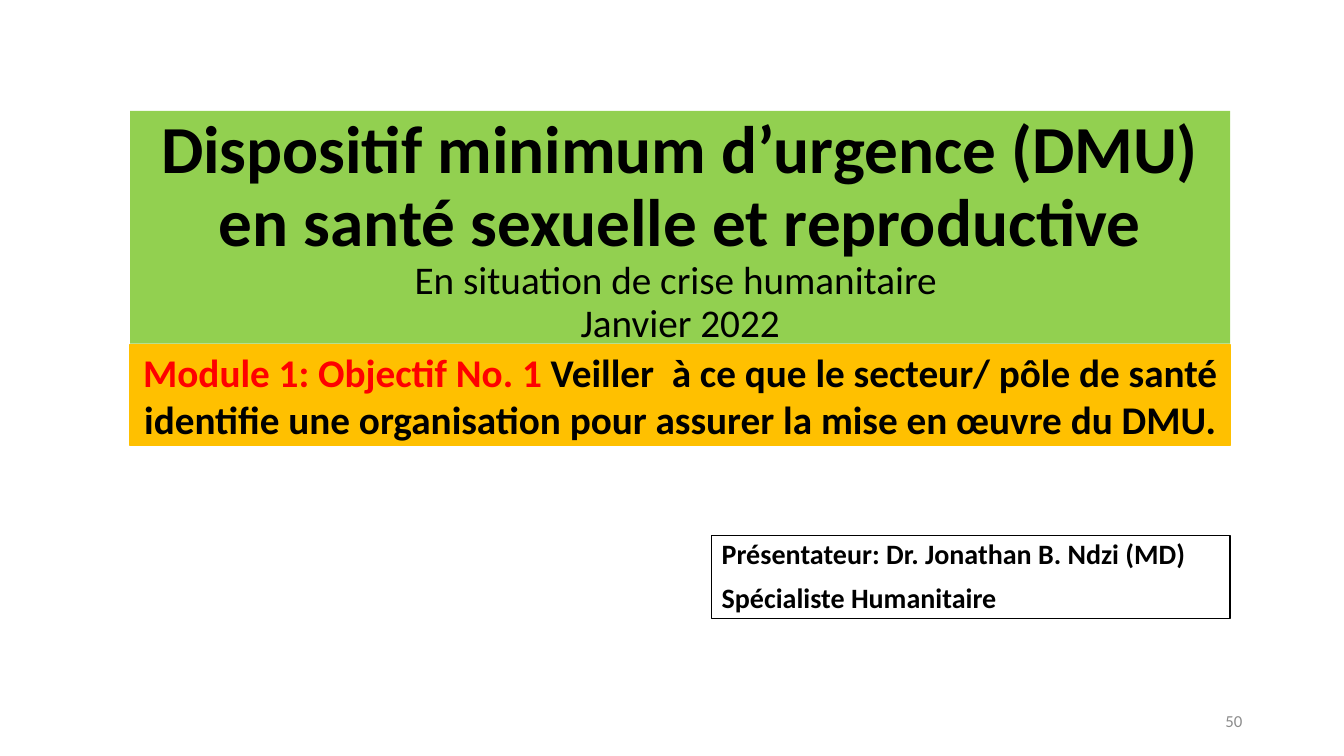
from pptx import Presentation, util as u
from pptx.dml.color import RGBColor
from pptx.enum import shapes, text

HUES = {"green": "92D050", "gold": "FFC000", "red": "FF0000",
        "black": "000000", "gray": "8C8C8C"}


class Deck:
    face = "Calibri"

    def __init__(self, wide, high):
        self.prs = Presentation()
        self.prs.slide_width, self.prs.slide_height = u.Inches(wide), u.Inches(high)
        self.slide = self.prs.slides.add_slide(self.prs.slide_layouts[6])

    def hue(self, name):
        return RGBColor.from_string(HUES[name])

    def box(self, spot, fill=None, line=None, width=1):
        shape = self.slide.shapes.add_shape(
            shapes.MSO_SHAPE.RECTANGLE, *map(u.Inches, spot))
        shape.shadow.inherit = False
        if fill:
            shape.fill.solid()
            shape.fill.fore_color.rgb = self.hue(fill)
        else:
            shape.fill.background()
        if line:
            shape.line.color.rgb = self.hue(line)
            shape.line.width = u.Pt(width)
        else:
            shape.line.fill.background()
        return shape

    def label(self, spot):
        return self.slide.shapes.add_textbox(*map(u.Inches, spot))

    def put_text(self, shape, paras, anchor="TOP", **form):
        """Each paragraph is a list of (words, size, bold, hue) runs."""
        frame = shape.text_frame
        frame.word_wrap = True
        frame.vertical_anchor = text.MSO_ANCHOR[anchor]
        for i, runs in enumerate(paras):
            para = frame.paragraphs[0] if i == 0 else frame.add_paragraph()
            for key, value in form.items():
                setattr(para, key, value)
            for words, size, bold, hue in runs:
                run = para.add_run()
                run.text = words
                style = {"name": self.face, "size": u.Pt(size), "bold": bold}
                for key, value in style.items():
                    setattr(run.font, key, value)
                run.font.color.rgb = self.hue(hue)


def main():
    deck = Deck(13.33, 7.5)
    align = text.PP_ALIGN
    left, wide = 1.29, 10.91

    # Title
    title = deck.box((left, 1.1, wide, 2.31), fill="green")
    deck.put_text(title, [
        [("Dispositif minimum d’urgence (DMU) en santé sexuelle et reproductive",
          48, True, "black")],
        [("En situation de crise humanitaire ", 28, False, "black")],
        [("Janvier 2022", 28, False, "black")],
    ], alignment=align.CENTER, line_spacing=0.9)

    # Presenter
    host = deck.box((7.06, 5.31, 5.14, 0.83), line="black", width=0.75)
    deck.put_text(host, [
        [(words, 20, True, "black")] for words in
        ("Présentateur: Dr. Jonathan B. Ndzi (MD)", "Spécialiste Humanitaire")
    ], alignment=align.LEFT, line_spacing=0.9, space_before=u.Pt(10))

    # Slide number
    deck.put_text(deck.label((9.42, 6.95, 3, 0.4)), [[("50", 12, False, "gray")]],
                  "MIDDLE", alignment=align.RIGHT)

    # Module band
    band = deck.box((left, 3.42, wide, 1), fill="gold", line="gold")
    deck.put_text(band, [[
        ("Module 1: Objectif No. 1 ", 28, True, "red"),
        ("Veiller  à ce que le secteur/ pôle de santé identifie une organisation "
         "pour assurer la mise en œuvre du DMU.", 28, True, "black"),
    ]], "MIDDLE", alignment=align.CENTER)

    deck.prs.save("out.pptx")


if __name__ == "__main__":
    main()
